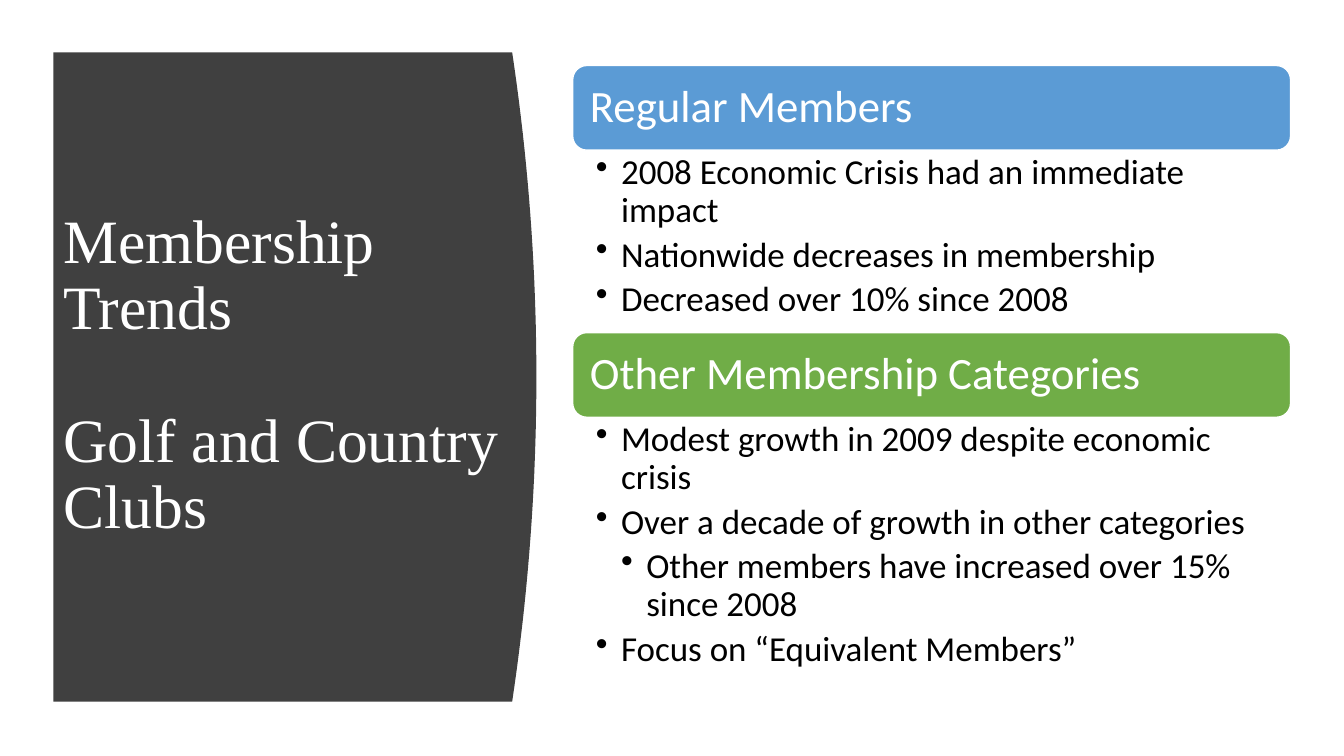
"""Builds the membership trends slide."""
from lxml import etree
from pptx import Presentation
from pptx.dml.color import RGBColor
from pptx.enum.shapes import MSO_SHAPE
from pptx.enum.text import MSO_ANCHOR, MSO_AUTO_SIZE, PP_ALIGN
from pptx.oxml.ns import qn
from pptx.util import Inches, Pt

COLORS = {"panel": "404040", "white": "FFFFFF", "black": "000000",
          "blue": "5B9BD5", "green": "70AD47"}

TITLE = [(0, "Membership Trends"), (0, "Golf and Country Clubs")]

SECTIONS = [
    {"heading": "Regular Members", "color": "blue", "body_height": 1.81,
     "points": [(1, "2008 Economic Crisis had an immediate impact"),
                (1, "Nationwide decreases in membership"),
                (1, "Decreased over 10% since 2008")]},
    {"heading": "Other Membership Categories", "color": "green", "body_height": 2.68,
     "points": [(1, "Modest growth in 2009 despite economic crisis"),
                (1, "Over a decade of growth in other categories"),
                (2, "Other members have increased over 15% since 2008"),
                (1, "Focus on “Equivalent Members”")]},
]

PANEL_LEFT, PANEL_TOP, PANEL_EDGE, PANEL_HEIGHT = 0.53, 0.52, 5.08, 6.44
BULGE, CURVE_STEPS = 0.24, 40
SECTION_LEFT, SECTION_TOP, SECTION_WIDTH, HEADING_HEIGHT = 5.68, 0.65, 7.12, 0.84
INDENT = 0.25


def rgb(name):
    return RGBColor.from_string(COLORS[name])


def write(shape, lines, *, size, color, font="Calibri", anchor=MSO_ANCHOR.MIDDLE,
          insets=(0.1, 0.05, 0.1, 0.05), gap=0, after=0):
    """Write (level, text) lines; levels above zero get bullets."""
    frame = shape.text_frame
    frame.word_wrap = True
    frame.auto_size = MSO_AUTO_SIZE.NONE
    frame.vertical_anchor = anchor
    (frame.margin_left, frame.margin_top,
     frame.margin_right, frame.margin_bottom) = map(Inches, insets)
    for index, (level, text) in enumerate(lines):
        paragraph = frame.add_paragraph() if index else frame.paragraphs[0]
        paragraph.alignment = PP_ALIGN.LEFT
        paragraph.line_spacing = 0.9
        paragraph.space_before = Pt(gap if index else 0)
        paragraph.space_after = Pt(after)
        run = paragraph.add_run()
        run.text = text
        run.font.name = font
        run.font.size = Pt(size)
        run.font.color.rgb = rgb(color)
        if level:
            paragraph.level = level
            properties = paragraph._p.get_or_add_pPr()
            properties.set("marL", str(Inches(level * INDENT)))
            properties.set("indent", str(-Inches(INDENT)))
            etree.SubElement(properties, qn("a:buChar")).set("char", "•")


def add_panel(shapes):
    """Draw the dark panel whose right edge bows outward."""
    curve = []
    for step in range(CURVE_STEPS + 1):
        part = step / CURVE_STEPS
        x = PANEL_EDGE + BULGE * (1 - (2 * part - 1) ** 2)
        curve.append((Inches(x), Inches(PANEL_TOP + part * PANEL_HEIGHT)))
    builder = shapes.build_freeform(Inches(PANEL_LEFT), Inches(PANEL_TOP))
    corner = (Inches(PANEL_LEFT), Inches(PANEL_TOP + PANEL_HEIGHT))
    builder.add_line_segments(curve + [corner], close=True)
    panel = builder.convert_to_shape()
    panel.shadow.inherit = False
    panel.fill.solid()
    panel.fill.fore_color.rgb = rgb("panel")
    panel.line.fill.background()
    return panel


def add_section(shapes, section, top):
    """Add a heading bar with its points and return the bottom edge."""
    heading = shapes.add_shape(
        MSO_SHAPE.ROUNDED_RECTANGLE, Inches(SECTION_LEFT), Inches(top),
        Inches(SECTION_WIDTH), Inches(HEADING_HEIGHT))
    heading.shadow.inherit = False
    heading.fill.solid()
    heading.fill.fore_color.rgb = rgb(section["color"])
    heading.line.color.rgb = rgb("white")
    heading.line.width = Pt(1)
    write(heading, [(0, section["heading"])], size=32, color="white",
          insets=(0.13, 0.13, 0.13, 0.13))

    body_top = top + HEADING_HEIGHT
    points = shapes.add_textbox(Inches(SECTION_LEFT), Inches(body_top),
                                Inches(SECTION_WIDTH), Inches(section["body_height"]))
    write(points, section["points"], size=25, color="black", anchor=MSO_ANCHOR.TOP,
          insets=(0.23, 0.04, 0.25, 0.04), after=5)
    return body_top + section["body_height"]


def main():
    deck = Presentation()
    deck.slide_width, deck.slide_height = Inches(13.33), Inches(7.5)
    slide = deck.slides.add_slide(deck.slide_layouts[5])
    shapes = slide.shapes

    panel = add_panel(shapes)
    title = shapes.title
    title.left, title.top = Inches(PANEL_LEFT), Inches(1.11)
    title.width, title.height = Inches(4.53), Inches(5.24)
    write(title, TITLE, size=44, color="white", font="Times New Roman", gap=47)
    panel.element.addnext(title.element)

    top = SECTION_TOP
    for section in SECTIONS:
        top = add_section(shapes, section, top)
    deck.save("out.pptx")


if __name__ == "__main__":
    main()
